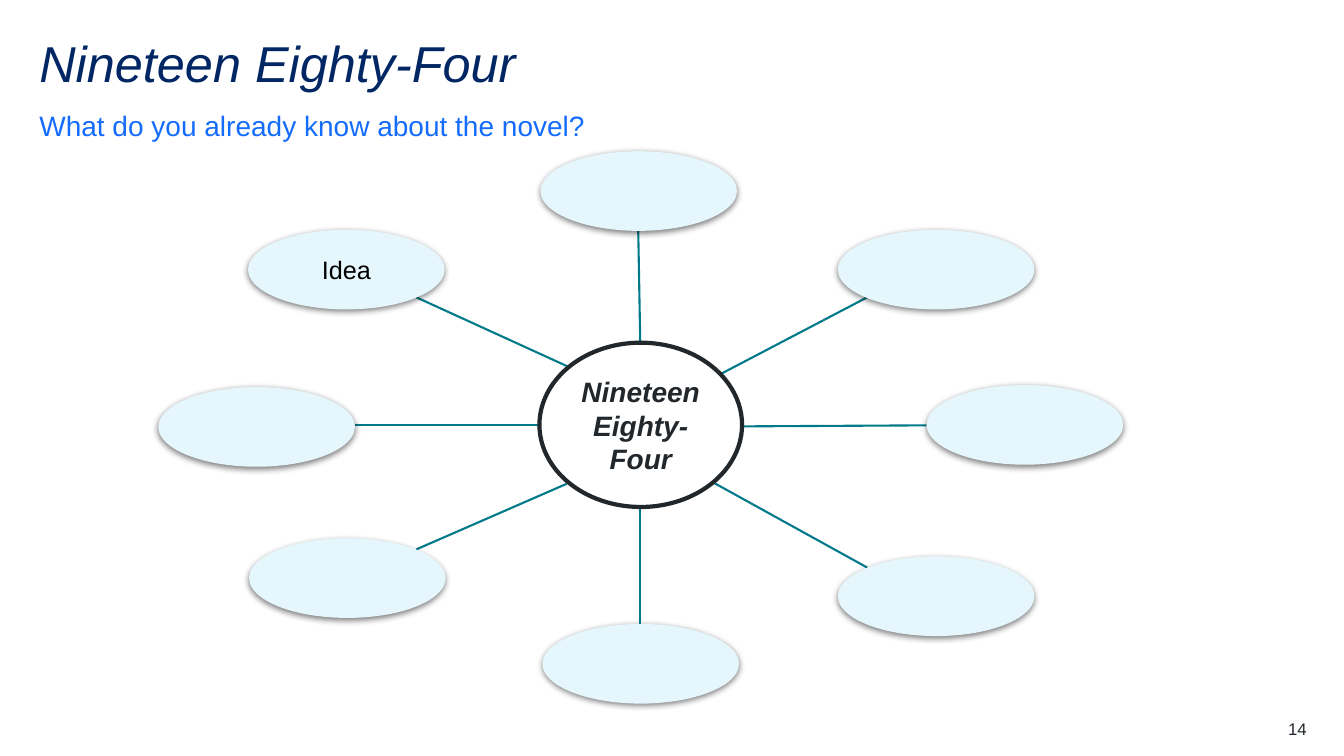
import pptx
import pptx.util
import pptx.dml.color
import pptx.enum.shapes
import pptx.enum.text
import pptx.oxml
import pptx.oxml.ns

Inches, Pt = pptx.util.Inches, pptx.util.Pt
RGBColor = pptx.dml.color.RGBColor
ALIGN, ANCHOR = pptx.enum.text.PP_ALIGN, pptx.enum.text.MSO_ANCHOR
OVAL = pptx.enum.shapes.MSO_SHAPE.OVAL
STRAIGHT = pptx.enum.shapes.MSO_CONNECTOR.STRAIGHT

NAVY = RGBColor(0x00, 0x26, 0x64)
BLUE = RGBColor(0x14, 0x6C, 0xFD)
TEAL = RGBColor(0x00, 0x7A, 0x8A)
PALE = RGBColor(0xE5, 0xF7, 0xFC)
INK = RGBColor(0x22, 0x27, 0x2B)
BLACK = RGBColor(0, 0, 0)
WHITE = RGBColor(255, 255, 255)

TITLE = "Nineteen Eighty-Four"
SUBTITLE = "What do you already know about the novel?"
PAGE = "14"
HUB = (5.35, 3.4, 2.01, 1.63)
IDEA_SIZE = (1.95, 0.79)
# left, top, text, spoke start at hub, spoke end at idea
IDEAS = [
    (2.46, 2.28, "Idea", (5.64, 3.64), (4.13, 2.95)),
    (5.36, 1.5, "", (6.35, 3.4), (6.33, 2.28)),
    (8.31, 2.28, "", (7.13, 3.72), (8.6, 2.95)),
    (9.19, 3.82, "", (7.36, 4.23), (9.19, 4.22)),
    (8.31, 5.52, "", (7.08, 4.79), (8.6, 5.63)),
    (5.38, 6.19, "", (6.35, 5.04), (6.35, 6.19)),
    (2.47, 5.34, "", (5.62, 4.8), (4.13, 5.45)),
    (1.57, 3.84, "", (5.35, 4.22), (3.52, 4.22)),
]
SHADOW = (
    '<a:effectLst xmlns:a="http://schemas.openxmlformats.org/drawingml/2006/main">'
    '<a:outerShdw blurRad="57150" dist="19050" dir="5400000" algn="ctr" rotWithShape="0">'
    '<a:srgbClr val="000000"><a:alpha val="50000"/></a:srgbClr>'
    '</a:outerShdw></a:effectLst>'
)


def write(sp, text, size, color, font=None, para=None, anchor=ANCHOR.TOP, margins=(0, 0)):
    tf = sp.text_frame
    side, end = map(Inches, margins)
    frame = dict(word_wrap=True, auto_size=pptx.enum.text.MSO_AUTO_SIZE.NONE,
                 vertical_anchor=anchor, margin_left=side, margin_right=side,
                 margin_top=end, margin_bottom=end)
    for name, value in frame.items():
        setattr(tf, name, value)
    p = tf.paragraphs[0]
    for name, value in {"alignment": ALIGN.LEFT, **(para or {})}.items():
        setattr(p, name, value)
    r = p.add_run()
    r.text = text
    for name, value in {"name": "Arial", "size": Pt(size), **(font or {})}.items():
        setattr(r.font, name, value)
    r.font.color.rgb = color


def oval(s, box, fill):
    sp = s.shapes.add_shape(OVAL, *map(Inches, box))
    sp.shadow.inherit = False
    sp.fill.solid()
    sp.fill.fore_color.rgb = fill
    sp.line.fill.background()
    return sp


def main():
    prs = pptx.Presentation()
    prs.slide_width, prs.slide_height = Inches(13.33), Inches(7.5)
    s = prs.slides.add_slide(prs.slide_layouts[5])

    title = s.shapes.title
    title.left, title.top, title.width, title.height = map(Inches, (0.39, 0.39, 12.56, 0.6))
    write(title, TITLE, 36, NAVY, {"italic": True}, {"line_spacing": 0.9})

    subtitle = s.shapes.add_textbox(*map(Inches, (0.39, 1.07, 12.56, 0.34)))
    write(subtitle, SUBTITLE, 20, BLUE, para={"line_spacing": 1.5, "space_after": Pt(12)},
          anchor=ANCHOR.BOTTOM)

    for *_, start, end in IDEAS:
        spoke = s.shapes.add_connector(STRAIGHT, *map(Inches, start + end))
        spoke.line.color.rgb = TEAL
        spoke.line.width = Pt(1.5)
        spoke._element.spPr.append(pptx.oxml.parse_xml(
            '<a:effectLst %s/>' % pptx.oxml.ns.nsdecls("a")))

    centred = dict(para={"alignment": ALIGN.CENTER}, anchor=ANCHOR.MIDDLE, margins=(0.09, 0.04))
    hub = oval(s, HUB, WHITE)
    hub.line.color.rgb = INK
    hub.line.width = Pt(3)
    write(hub, TITLE, 20, INK, {"bold": True, "italic": True}, **centred)

    for left, top, text, *_ in IDEAS:
        idea = oval(s, (left, top, *IDEA_SIZE), PALE)
        spPr = idea._element.spPr
        spPr.replace(spPr.find(pptx.oxml.ns.qn("a:effectLst")), pptx.oxml.parse_xml(SHADOW))
        if text:
            write(idea, text, 18, BLACK, **centred)

    page = s.shapes.add_textbox(*map(Inches, (12.17, 7.13, 0.79, 0.2)))
    write(page, PAGE, 12, INK, para={"alignment": ALIGN.RIGHT})

    prs.save("out.pptx")


if __name__ == "__main__":
    main()
